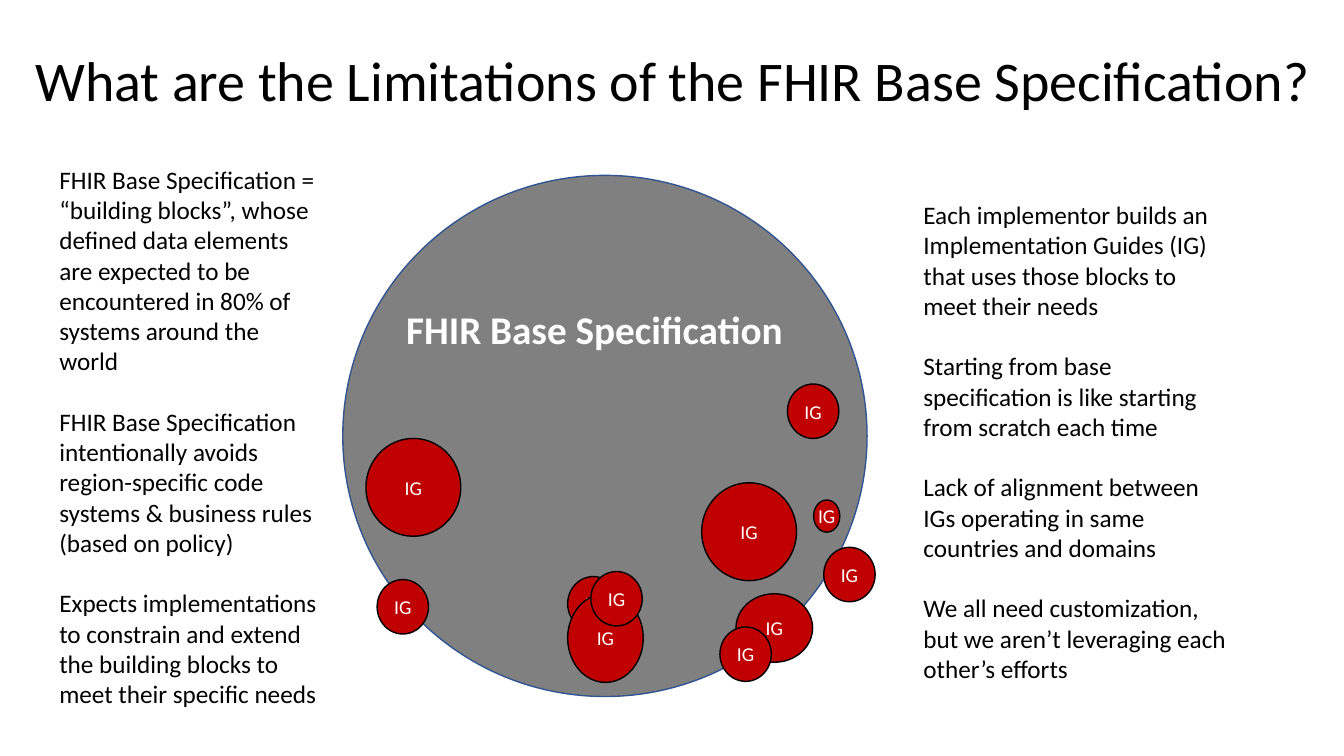
from pptx import Presentation
from pptx.dml.color import RGBColor
from pptx.enum.shapes import MSO_SHAPE
from pptx.enum.text import MSO_ANCHOR, MSO_AUTO_SIZE, PP_ALIGN
from pptx.util import Inches, Pt

COLORS = {"black": "000000", "white": "FFFFFF", "gray": "808080",
          "blue": "325491", "red": "C00000"}


def write(tf, paragraphs, size, color, bold=False, align=None, gap=0):
    for i, text in enumerate(paragraphs):
        p = tf.paragraphs[0] if i == 0 else tf.add_paragraph()
        p.alignment = align
        p.space_before = Pt(gap if i else 0)
        r = p.add_run()
        r.text = text
        r.font.color.rgb = RGBColor.from_string(COLORS[color])
        for name, value in {"name": "Calibri", "size": Pt(size), "bold": bold}.items():
            setattr(r.font, name, value)


def add_circle(s, box, fill, line):
    sp = s.shapes.add_shape(MSO_SHAPE.FLOWCHART_CONNECTOR, *map(Inches, box))
    sp.shadow.inherit = False
    sp.fill.solid()
    sp.fill.fore_color.rgb = RGBColor.from_string(COLORS[fill])
    sp.line.color.rgb = RGBColor.from_string(COLORS[line])
    sp.line.width = Pt(1)
    return sp


prs = Presentation()
prs.slide_width, prs.slide_height = Inches(13.33), Inches(7.5)
s = prs.slides.add_slide(prs.slide_layouts[5])

title = s.shapes.title
title_box = {"left": 0.09, "top": 0.1, "width": 13.16, "height": 1.45}
for name, value in title_box.items():
    setattr(title, name, Inches(value))
tf = title.text_frame
tf.vertical_anchor = MSO_ANCHOR.MIDDLE
tf.auto_size = MSO_AUTO_SIZE.NONE
write(tf, ["What are the Limitations of the FHIR Base Specification?"],
      40, "black", align=PP_ALIGN.CENTER)
tf.paragraphs[0].line_spacing = 0.9

add_circle(s, (3.4, 1.74, 5.2, 5.17), "gray", "blue")

base_points = [
    "FHIR Base Specification = “building blocks”, whose defined data elements are expected to be encountered in 80% of systems around the world",
    "FHIR Base Specification intentionally avoids region-specific code systems & business rules (based on policy)",
    "Expects implementations to constrain and extend the building blocks to meet their specific needs",
]
guide_points = [
    "Each implementor builds an Implementation Guides (IG) that uses those blocks to meet their needs",
    "Starting from base specification is like starting from scratch each time",
    "Lack of alignment between IGs operating in same countries and domains",
    "We all need customization, but we aren’t leveraging each other’s efforts",
]
text_boxes = [
    ((0.49, 1.58, 2.8, 5.55), base_points, 18, "black", False),
    ((3.93, 2.98, 4.39, 0.57), ["FHIR Base Specification"], 28, "white", True),
    ((9.06, 1.93, 3.26, 4.95), guide_points, 18, "black", False),
]
for box, paragraphs, size, color, bold in text_boxes:
    tf = s.shapes.add_textbox(*map(Inches, box)).text_frame
    tf.word_wrap = True
    tf.auto_size = MSO_AUTO_SIZE.SHAPE_TO_FIT_TEXT
    write(tf, paragraphs, size, color, bold, gap=21.6)

LARGE, SMALL = (0.94, 0.97), (0.51, 0.54)
guides = [
    (6.96, 4.79, LARGE),
    (7.3, 5.89, (0.76, 0.68)),
    (8.07, 4.96, (0.26, 0.32)),
    (8.17, 5.43, SMALL),
    (5.63, 5.72, SMALL),
    (5.63, 5.89, (0.75, 0.88)),
    (5.86, 5.67, SMALL),
    (7.14, 6.22, SMALL),
    (7.81, 3.81, SMALL),
    (3.63, 4.35, LARGE),
    (3.74, 5.75, SMALL),
]
for left, top, size in guides:
    tf = add_circle(s, (left, top, *size), "red", "black").text_frame
    tf.vertical_anchor = MSO_ANCHOR.MIDDLE
    for side in ("left", "top", "right", "bottom"):
        setattr(tf, f"margin_{side}", 0)
    write(tf, ["IG"], 14, "white", align=PP_ALIGN.CENTER)

prs.save("out.pptx")
